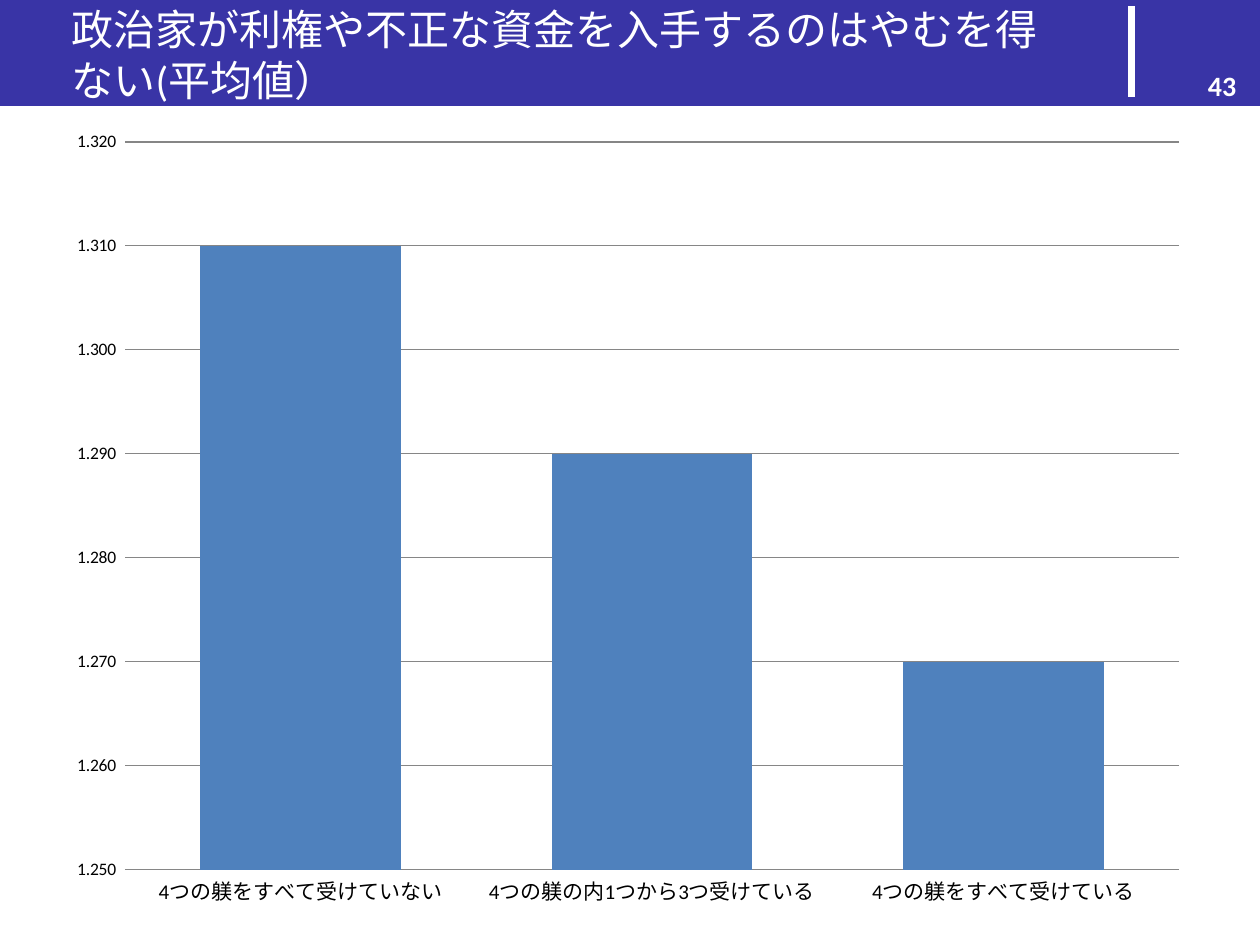
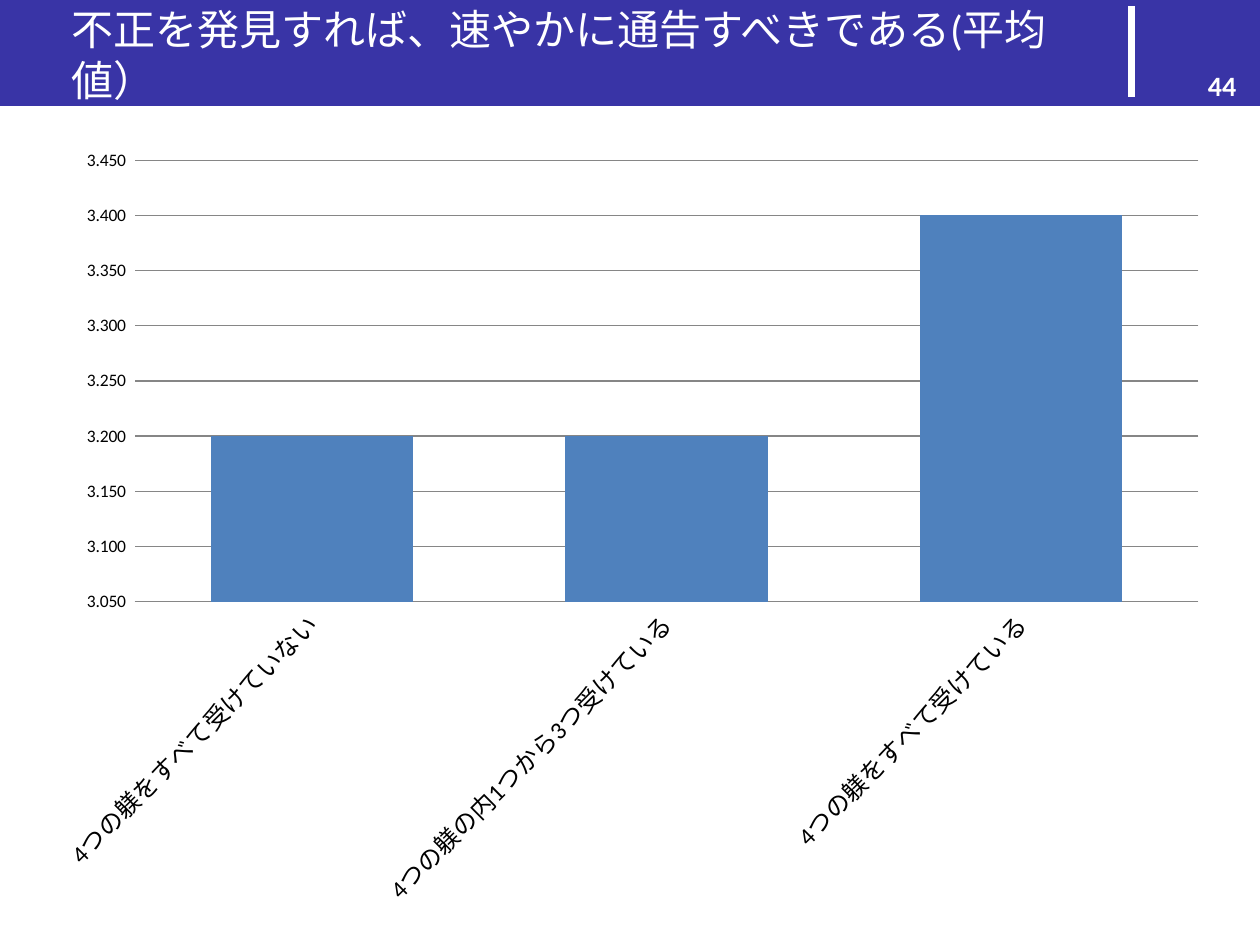
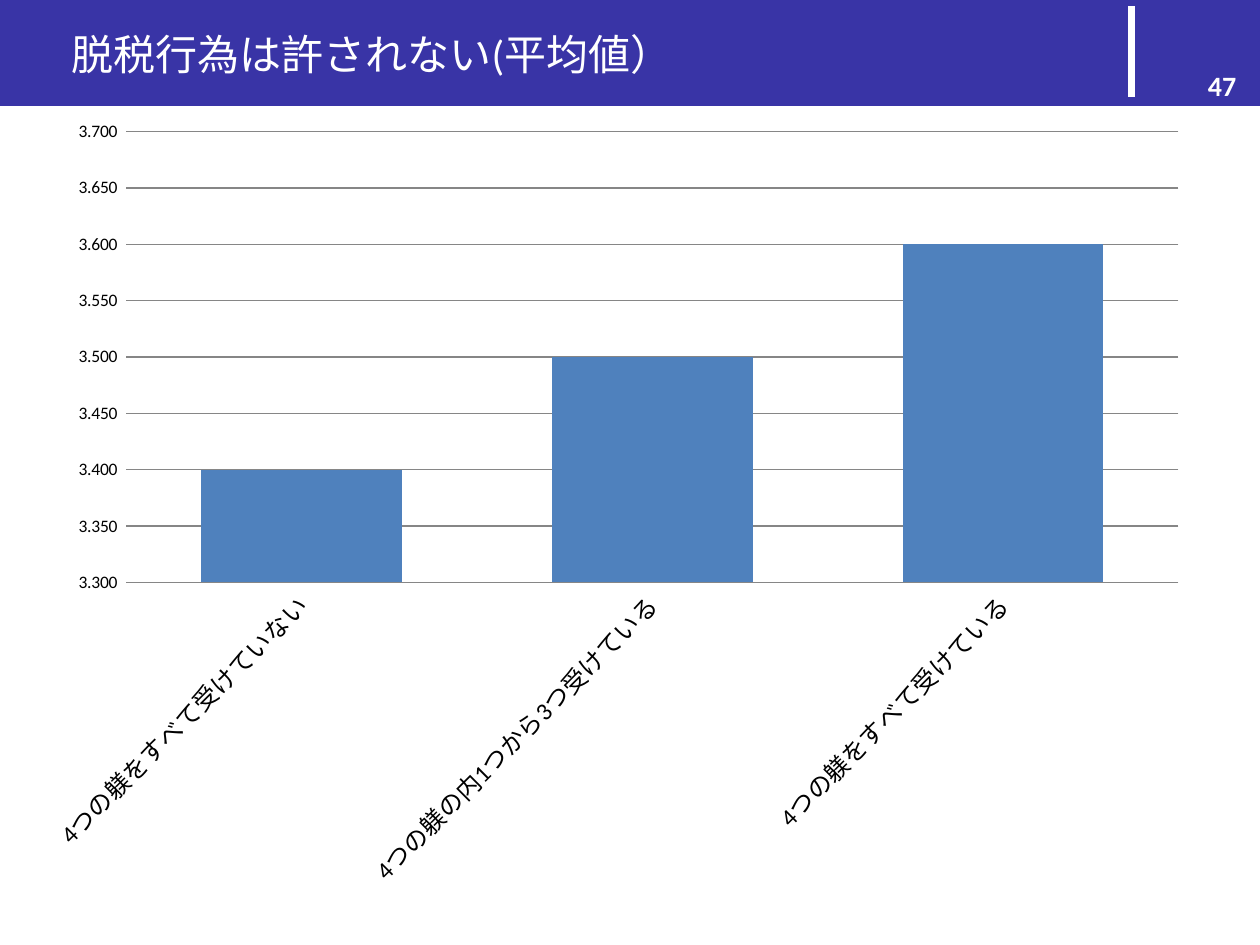
from dataclasses import dataclass

from lxml import etree
from pptx import Presentation
from pptx import util as u
from pptx.chart import data as cd
from pptx.dml.color import RGBColor
from pptx.enum import chart as ch, shapes, text
from pptx.oxml import ns


@dataclass(frozen=True)
class Theme:
    font: str = "Calibri"
    band: RGBColor = RGBColor(0x39, 0x34, 0xA6)
    white: RGBColor = RGBColor(255, 255, 255)
    black: RGBColor = RGBColor(0, 0, 0)
    bar: RGBColor = RGBColor(0x4F, 0x81, 0xBD)
    grid: RGBColor = RGBColor(0x86, 0x86, 0x86)
    title: int = 24
    number: int = 16
    scale: int = 10
    label: int = 12
    slant: int = 14


T = Theme()
WIDE, HIGH = 10, 7.5
GROUPS = ["4つの躾をすべて受けていない", "4つの躾の内1つから3つ受けている",
          "4つの躾をすべて受けている"]

# title, page, chart box, means, (low, high, step), label size, label turn
SLIDES = [
    ("政治家が利権や不正な資金を入手するのはやむを得ない(平均値）", "43",
     (0.43, 0.92, 9.11, 6.4), (1.31, 1.29, 1.27), (1.25, 1.32, 0.01), T.label, 0),
    ("不正を発見すれば、速やかに通告すべきである(平均値）", "44",
     (0.28, 1.07, 9.42, 6.24), (3.2, 3.2, 3.4), (3.05, 3.45, 0.05), T.slant, -45),
    ("脱税行為は許されない(平均値）", "47",
     (0.2, 0.84, 9.34, 6.32), (3.4, 3.5, 3.6), (3.3, 3.7, 0.05), T.slant, -45),
]


def inches(*nums):
    return [u.Inches(n) for n in nums]


def put(thing, **vals):
    """Set each named attribute of thing."""
    for key, val in vals.items():
        setattr(thing, key, val)


def style(font, size, color, bold=False):
    put(font, name=T.font, size=u.Pt(size), bold=bold)
    font.color.rgb = color


def add_text(slide, box, words, size, align, bold=False):
    frame = slide.shapes.add_textbox(*inches(*box)).text_frame
    put(frame, word_wrap=True, vertical_anchor=text.MSO_ANCHOR.MIDDLE)
    para = frame.paragraphs[0]
    para.alignment = align
    run = para.add_run()
    run.text = words
    style(run.font, size, T.white, bold)


def add_band(slide, box, split=7.84, rule=8.98):
    """Draw the two-part header band and the white rule on it."""
    left, top, wide, high = box
    for start, end in ((left, left + split), (left + split, left + wide)):
        part = slide.shapes.add_shape(shapes.MSO_SHAPE.RECTANGLE,
                                      *inches(start, top, end - start, high))
        part.shadow.inherit = False
        part.fill.solid()
        part.fill.fore_color.rgb = T.band
        part.line.fill.background()
    line = slide.shapes.add_connector(
        shapes.MSO_CONNECTOR.STRAIGHT,
        *inches(left + rule, top + 0.05, left + rule, top + high - 0.07))
    line.line.color.rgb = T.white
    line.line.width = u.Pt(3.5)
    etree.SubElement(line._element.spPr, ns.qn("a:effectLst"))


def add_head(slide, box, title, page):
    left, top = box[:2]
    add_band(slide, box)
    add_text(slide, (left + 0.47, top + 0.08, 8.13, 0.7), title, T.title,
             text.PP_ALIGN.LEFT)
    add_text(slide, (left + 7.58, top + 0.42, 2.33, 0.52), page, T.number,
             text.PP_ALIGN.RIGHT, True)


def add_bars(slide, box, means, span, size, turn):
    """Add the column chart; a turn of 0 leaves its labels on one line."""
    data = cd.CategoryChartData()
    data.categories = GROUPS
    data.add_series("Series 1", means)
    chart = slide.shapes.add_chart(ch.XL_CHART_TYPE.COLUMN_CLUSTERED,
                                   *inches(*box), data).chart
    put(chart, has_legend=False, has_title=False)
    style(chart.font, T.scale, T.black)

    plot = chart.plots[0]
    put(plot, gap_width=75, overlap=-25, vary_by_categories=False)
    fill = plot.series[0].format.fill
    fill.solid()
    fill.fore_color.rgb = T.bar

    cats, vals = chart.category_axis, chart.value_axis
    for axis, pts in ((cats, size), (vals, T.scale)):
        put(axis, major_tick_mark=ch.XL_TICK_MARK.NONE,
            minor_tick_mark=ch.XL_TICK_MARK.NONE)
        style(axis.tick_labels.font, pts, T.black)
    if turn:
        cats._element.txPr.bodyPr.set("rot", str(turn * 60000))
    low, high, step = span
    put(vals, minimum_scale=low, maximum_scale=high, major_unit=step,
        has_major_gridlines=True)
    put(vals.tick_labels, number_format=r"0.000_);[Red]\(0.000\)",
        number_format_is_linked=False)
    vals.format.line.fill.background()
    for line in (cats.format.line, vals.major_gridlines.format.line):
        line.color.rgb = T.grid
        line.width = u.Pt(0.75)


def main():
    deck = Presentation()
    put(deck, slide_width=u.Inches(WIDE), slide_height=u.Inches(HIGH))
    for title, page, *chart in SLIDES:
        slide = deck.slides.add_slide(deck.slide_layouts[6])
        add_head(slide, (0, 0, WIDE, 0.84), title, page)
        add_bars(slide, *chart)
    deck.save("out.pptx")


if __name__ == "__main__":
    main()
